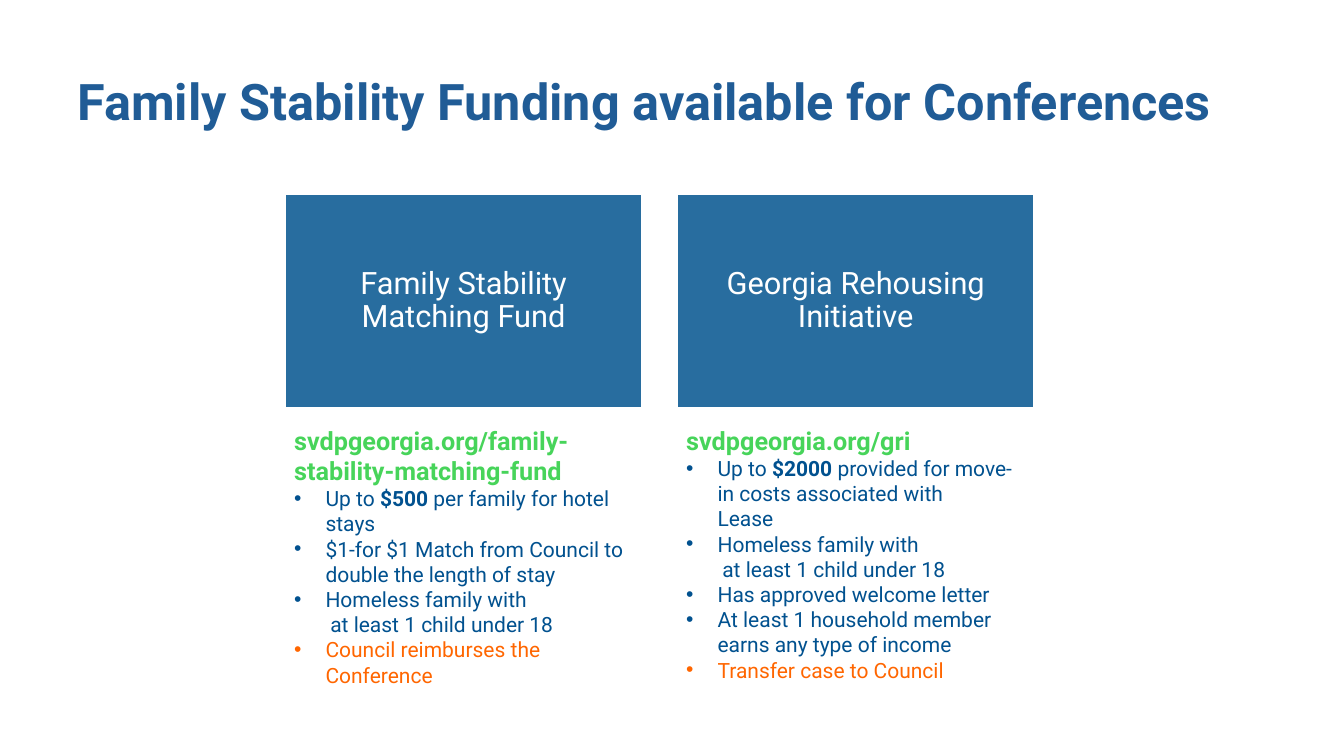
from lxml.etree import SubElement
from pptx import Presentation
from pptx.dml.color import RGBColor
from pptx.enum.shapes import MSO_SHAPE
from pptx.enum.text import MSO_ANCHOR, MSO_AUTO_SIZE, PP_ALIGN
from pptx.oxml.ns import qn
from pptx.util import Cm, Pt

WHITE = RGBColor(0xFF, 0xFF, 0xFF)
TITLE_BLUE = RGBColor(0x20, 0x5C, 0x96)
CARD_BLUE = RGBColor(0x28, 0x6D, 0x9F)
TEXT_BLUE = RGBColor(0x01, 0x51, 0x8F)
GREEN = RGBColor(0x47, 0xD4, 0x5A)
ORANGE = RGBColor(0xFF, 0x66, 0x00)

FONT = "Roboto"
PITCH = 9.88  # cm from one column to the next
BREAK = "\n"

# Paragraph kinds: left margin and first-line indent in cm, bullet, font values
KINDS = {
    "link": (0, 0, False, dict(size=Pt(18), bold=True, color=GREEN)),
    "item": (0.79, -0.79, True, dict(size=Pt(15), bold=False, color=TEXT_BLUE)),
    "more": (0.91, 0, False, dict(size=Pt(15), bold=False, color=TEXT_BLUE)),
    "last": (0.79, -0.79, True, dict(size=Pt(15), bold=False, color=ORANGE)),
}

FUNDS = [
    ("Family Stability Matching Fund", [
        ("link", ["svdpgeorgia.org/family-stability-matching-fund"]),
        ("item", ["Up to ", "$500 ", "per family for hotel stays"]),
        ("item", ["$1-for $1 Match from Council to double the length of stay"]),
        ("item", ["Homeless family with"]),
        ("more", ["at least 1 child under 18"]),
        ("last", ["Council reimburses the Conference"]),
    ]),
    ("Georgia Rehousing Initiative", [
        ("link", ["svdpgeorgia.org/gri"]),
        ("item", ["Up to ", "$2000 ", "provided for move-in costs associated with",
                  BREAK, "Lease"]),
        ("item", ["Homeless family with"]),
        ("more", ["at least 1 child under 18"]),
        ("item", ["Has approved welcome letter"]),
        ("item", ["At least 1 household member earns any type of income"]),
        ("last", ["Transfer case to Council"]),
    ]),
]


def add_run(p, text, color, **values):
    r = p.add_run()
    r.text = text
    r.font.name = FONT
    r.font.color.rgb = color
    for name, value in values.items():
        setattr(r.font, name, value)


def place(sp, left, top, width, height):
    sp.left, sp.top, sp.width, sp.height = Cm(left), Cm(top), Cm(width), Cm(height)


prs = Presentation()
prs.slide_width, prs.slide_height = Cm(33.87), Cm(19.05)
slide = prs.slides.add_slide(prs.slide_layouts[3])
title, *bodies = slide.placeholders

# Title
place(title, 1.7, 1.57, 31.55, 2.13)
tf = title.text_frame
tf.auto_size = MSO_AUTO_SIZE.NONE
tf.vertical_anchor = MSO_ANCHOR.MIDDLE
p = tf.paragraphs[0]
p.alignment = PP_ALIGN.LEFT
p.line_spacing = 0.9
add_run(p, "Family Stability Funding available for Conferences", TITLE_BLUE,
        size=Pt(36), bold=True)

for col, (body, (fund, lines)) in enumerate(zip(bodies, FUNDS)):
    # Card with the name of the fund
    card = slide.shapes.add_shape(MSO_SHAPE.RECTANGLE, Cm(7.19 + col * PITCH),
                                  Cm(4.9), Cm(8.99), Cm(5.38))
    card.shadow.inherit = False
    card.fill.solid()
    card.fill.fore_color.rgb = CARD_BLUE
    card.line.color.rgb = WHITE
    card.line.width = Pt(1.5)
    tf = card.text_frame
    tf.word_wrap = True
    tf.vertical_anchor = MSO_ANCHOR.MIDDLE
    tf.margin_left = tf.margin_right = Cm(0.23)
    p = tf.paragraphs[0]
    p.alignment = PP_ALIGN.CENTER
    p.line_spacing = 0.9
    add_run(p, fund, WHITE, size=Pt(22))

    # Link and conditions below the card
    place(body, 7.16 + col * PITCH, 10.59, 9.02, 7.2)
    tf = body.text_frame
    tf.auto_size = MSO_AUTO_SIZE.NONE
    tf.vertical_anchor = MSO_ANCHOR.TOP
    for i, (kind, texts) in enumerate(lines):
        margin, indent, bullet, values = KINDS[kind]
        p = tf.paragraphs[0] if i == 0 else tf.add_paragraph()
        p.space_before = Pt(0)
        pPr = p._p.get_or_add_pPr()
        pPr.set("marL", str(Cm(margin)))
        pPr.set("indent", str(Cm(indent)))
        if bullet:
            SubElement(pPr, qn("a:buFont"), typeface="Arial")
            SubElement(pPr, qn("a:buChar"), char="•")
        else:
            SubElement(pPr, qn("a:buNone"))
        for text in texts:
            if text == BREAK:
                p.add_line_break()
                SubElement(p._p[-1], qn("a:rPr"), sz="1500")
            elif text.startswith("$") and len(texts) > 1:
                add_run(p, text, **{**values, "bold": True})
            else:
                add_run(p, text, **values)

prs.save("out.pptx")
